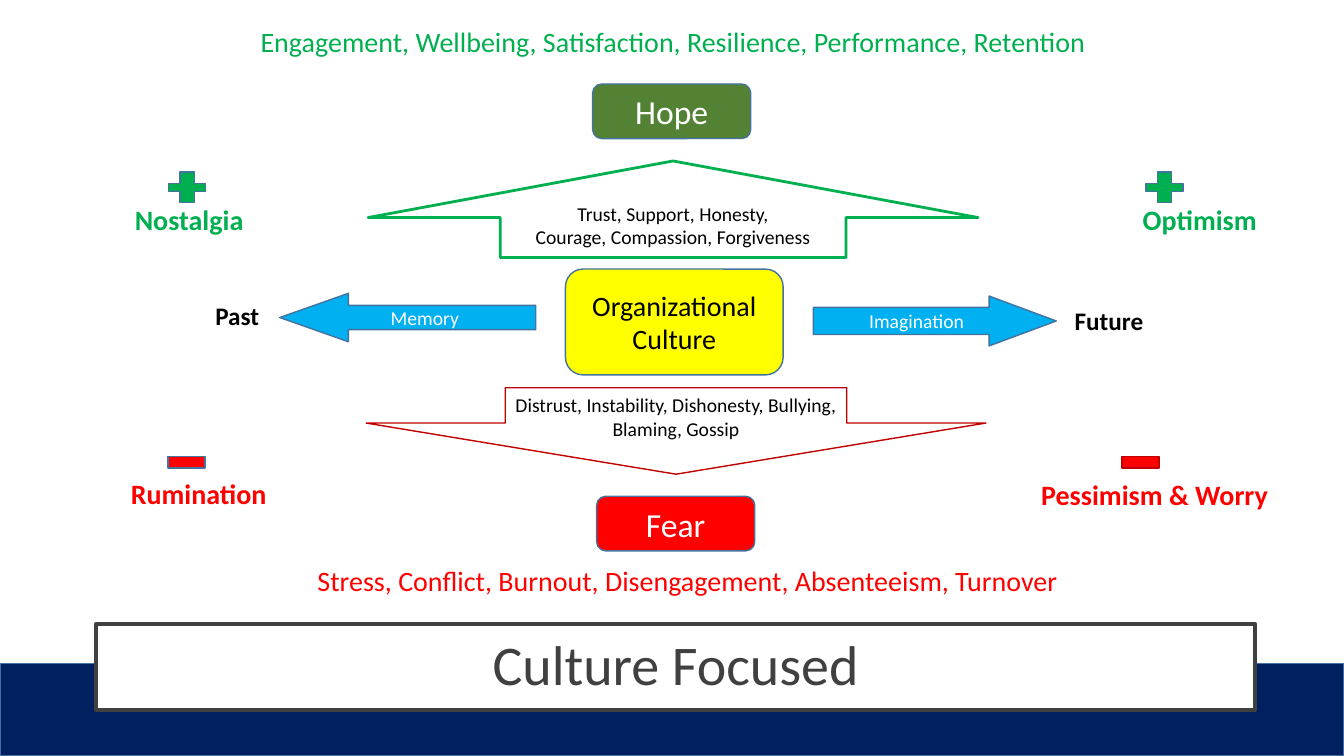
from pptx import Presentation
from pptx.dml.color import RGBColor
from pptx.enum.shapes import MSO_SHAPE as Shape
from pptx.enum.text import MSO_ANCHOR as Anchor, PP_ALIGN as Align
from pptx.util import Pt

WHITE = RGBColor(0xFF, 0xFF, 0xFF)
BLACK = RGBColor(0x00, 0x00, 0x00)
GREEN = RGBColor(0x00, 0xB0, 0x50)
MOSS = RGBColor(0x54, 0x82, 0x35)
RED = RGBColor(0xFF, 0x00, 0x00)
DARK_RED = RGBColor(0xC0, 0x00, 0x00)
YELLOW = RGBColor(0xFF, 0xFF, 0x00)
SKY = RGBColor(0x00, 0xB0, 0xF0)
NAVY = RGBColor(0x00, 0x20, 0x60)
STEEL = RGBColor(0x43, 0x73, 0x9E)
GRAY = RGBColor(0x40, 0x40, 0x40)

SLIDE_SIZE = (960, 540)
FONT = "Calibri"
LABEL_HEIGHT = 31.5
SIGN_WIDTH = 26.4
BADGE_SIZE = (113, 39)
TITLE = "Culture Focused"

BOXES = [
    (Shape.ROUNDED_RECTANGLE, (403.9, 192.2, 155.5, 75.6), [], YELLOW, STEEL, 1,
     "Organizational Culture", 20, BLACK),
    (Shape.RIGHT_ARROW, (581, 211.5, 173.5, 35.6), [0.543, 1.347], SKY, STEEL, 1,
     "Imagination", 14, WHITE),
    (Shape.LEFT_ARROW, (199.8, 209.5, 182.9, 34.6), [0.5, 1.418], SKY, STEEL, 1,
     "Memory", 14, WHITE),
    (Shape.DOWN_ARROW, (261.6, 277, 442.6, 61.7), [0.551, 0.592], None, DARK_RED, 1,
     "Distrust, Instability, Dishonesty, Bullying, Blaming, Gossip", 14, BLACK),
    (Shape.UP_ARROW, (263, 115, 435.6, 69), [0.567, 0.586], None, GREEN, 2,
     "Trust, Support, Honesty,\nCourage, Compassion, Forgiveness", 14, BLACK),
    (Shape.ROUNDED_RECTANGLE, (423.3, 60, *BADGE_SIZE), [], MOSS, STEEL, 1, "Hope", 24, WHITE),
    (Shape.ROUNDED_RECTANGLE, (426.2, 354.5, *BADGE_SIZE), [], RED, STEEL, 1, "Fear", 24, WHITE),
    (Shape.CROSS, (120.5, 122.8, SIGN_WIDTH, 22), [0.37], GREEN, STEEL, 1, "", 14, WHITE),
    (Shape.CROSS, (818.6, 122.8, SIGN_WIDTH, 22), [0.37], GREEN, STEEL, 1, "", 14, WHITE),
    (Shape.RECTANGLE, (120, 326.2, SIGN_WIDTH, 8), [], RED, STEEL, 1, "", 14, WHITE),
    (Shape.RECTANGLE, (801.4, 326.2, SIGN_WIDTH, 8), [], RED, DARK_RED, 1, "", 14, WHITE),
    (Shape.RECTANGLE, (0, 474, 960, 66), [], NAVY, STEEL, 1, "", 14, WHITE),
    (Shape.RECTANGLE, (68.6, 446, 828, 61), [], WHITE, GRAY, 3, TITLE, 40, GRAY),
]

LABELS = [
    ("Engagement, Wellbeing, Satisfaction, Resilience, Performance, Retention",
     169, 13.6, 623.5, 20, GREEN, False, Align.CENTER),
    ("Stress, Conflict, Burnout, Disengagement, Absenteeism, Turnover",
     204.3, 398.9, 573.8, 20, RED, False, Align.CENTER),
    ("Nostalgia", 89.2, 141.2, 126.7, 20, GREEN, True, Align.LEFT),
    ("Optimism", 717.6, 141.2, 187.2, 20, GREEN, True, Align.RIGHT),
    ("Rumination", 67.5, 337, 149, 20, RED, True, Align.CENTER),
    ("Pessimism & Worry", 711.2, 337.6, 201.6, 20, RED, True, Align.RIGHT),
    ("Past", 146.7, 210.9, 49, 18, BLACK, True, Align.LEFT),
    ("Future", 760.5, 214.4, 68, 18, BLACK, True, Align.LEFT),
]


def write(shape, text, align, anchor, side_margin, font_format):
    frame = shape.text_frame
    frame.text = text
    margin = Pt(side_margin)
    frame_format = {"word_wrap": True, "vertical_anchor": anchor,
                    "margin_left": margin, "margin_right": margin}
    for name, value in frame_format.items():
        setattr(frame, name, value)
    for paragraph in frame.paragraphs:
        paragraph.alignment = align
        if text == TITLE:
            paragraph.line_spacing = 0.9
        for name, value in font_format.items():
            setattr(paragraph.font, name, value)


def add_box(slide, kind, place, adjustments, fill, line, weight, text, size, color):
    shape = slide.shapes.add_shape(kind, *map(Pt, place))
    shape.shadow.inherit = False
    for index, value in enumerate(adjustments):
        shape.adjustments[index] = value
    if fill is None:
        shape.fill.background()
    else:
        shape.fill.solid()
        shape.fill.fore_color.rgb = fill
    shape.line.color.rgb = line
    shape.line.width = Pt(weight)
    if text:
        write(shape, text, Align.CENTER, Anchor.MIDDLE, 6,
              {"name": FONT, "size": Pt(size)})
        for paragraph in shape.text_frame.paragraphs:
            paragraph.font.color.rgb = color


def add_label(slide, text, left, top, width, size, color, bold, align):
    shape = slide.shapes.add_textbox(*map(Pt, (left, top, width, LABEL_HEIGHT)))
    write(shape, text, align, Anchor.TOP, 7.2,
          {"name": FONT, "size": Pt(size), "bold": bold})
    shape.text_frame.paragraphs[0].font.color.rgb = color


def main():
    presentation = Presentation()
    presentation.slide_width, presentation.slide_height = map(Pt, SLIDE_SIZE)
    slide = presentation.slides.add_slide(presentation.slide_layouts[6])
    for box in BOXES:
        add_box(slide, *box)
    for label in LABELS:
        add_label(slide, *label)
    presentation.save("out.pptx")


if __name__ == "__main__":
    main()
